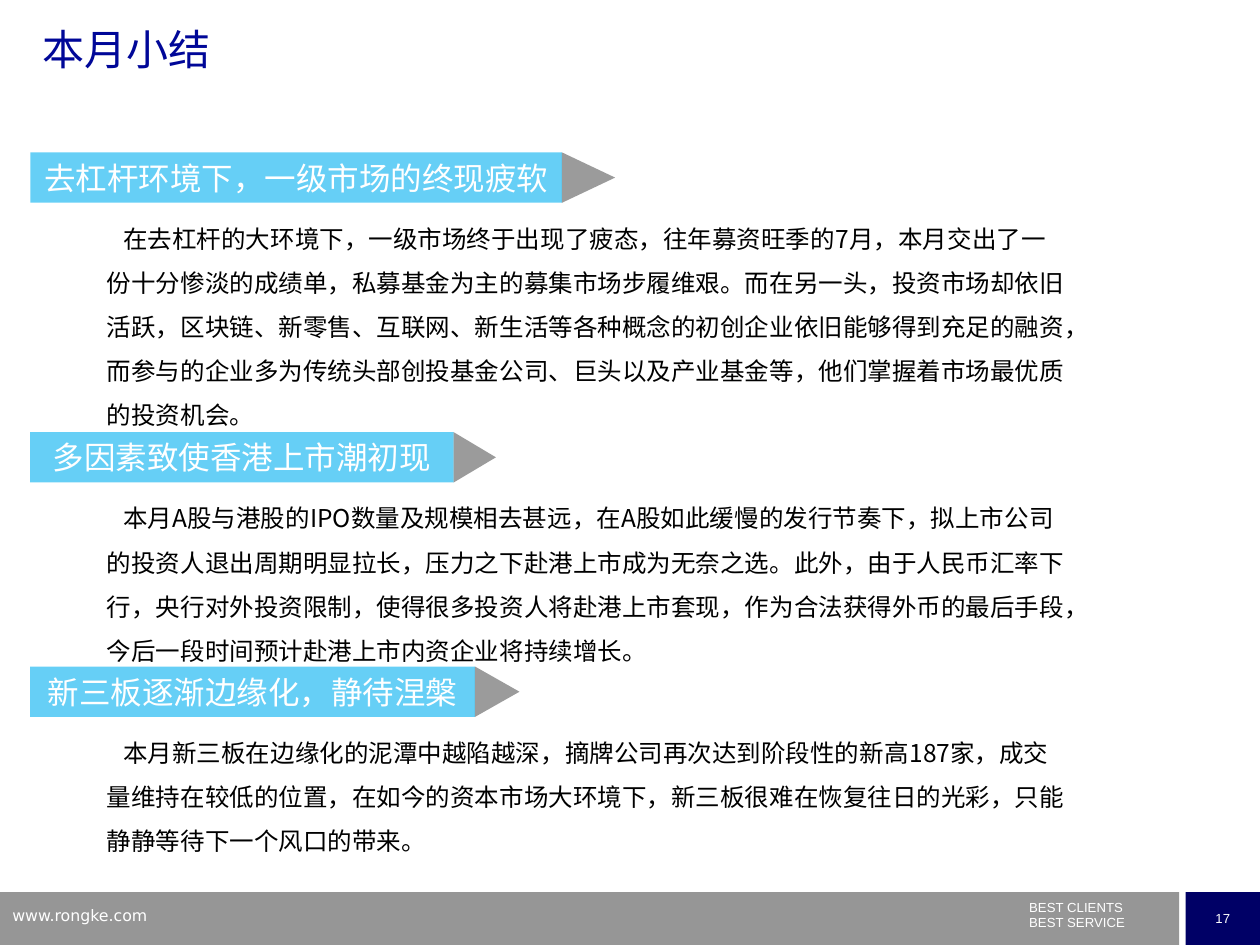
from dataclasses import dataclass

from lxml import etree
from pptx import Presentation
from pptx.dml.color import RGBColor
from pptx.enum import shapes, text
from pptx.oxml import ns
from pptx.util import Inches, Pt


@dataclass(frozen=True)
class Theme:
    """Colours, fonts and type sizes of the deck."""
    title: str = "000798"
    body: str = "000000"
    light: str = "FFFFFF"
    bar: str = "00B0F0"
    arrow: str = "595959"
    footer: str = "969696"
    page: str = "000066"
    cjk: str = "Noto Sans CJK SC"
    latin: str = "Arial"
    web: str = "DejaVu Sans"
    title_pt: float = 24
    heading_pt: float = 18
    body_pt: float = 14
    web_pt: float = 9
    small_pt: float = 7.5
    alpha: int = 60


T = Theme()

SECTIONS = [
    (1.21, 4.22, "去杠杆环境下，一级市场的终现疲软",
     "在去杠杆的大环境下，一级市场终于出现了疲态，往年募资旺季的7月，本月交出了一份十分惨淡的成绩单，"
     "私募基金为主的募集市场步履维艰。而在另一头，投资市场却依旧活跃，区块链、新零售、互联网、新生活等"
     "各种概念的初创企业依旧能够得到充足的融资，而参与的企业多为传统头部创投基金公司、巨头以及产业基金等，"
     "他们掌握着市场最优质的投资机会。"),
    (3.43, 3.36, "多因素致使香港上市潮初现",
     "本月A股与港股的IPO数量及规模相去甚远，在A股如此缓慢的发行节奏下，拟上市公司的投资人退出周期明显拉长，"
     "压力之下赴港上市成为无奈之选。此外，由于人民币汇率下行，央行对外投资限制，使得很多投资人将赴港上市套现，"
     "作为合法获得外币的最后手段，今后一段时间预计赴港上市内资企业将持续增长。"),
    (5.29, 3.53, "新三板逐渐边缘化，静待涅槃",
     "本月新三板在边缘化的泥潭中越陷越深，摘牌公司再次达到阶段性的新高187家，成交量维持在较低的位置，"
     "在如今的资本市场大环境下，新三板很难在恢复往日的光彩，只能静静等待下一个风口的带来。"),
]


def write(sp, content, font, size, color, wrap=True):
    """Set the text of a shape and format its runs."""
    tf = sp.text_frame
    tf.text = content
    tf.word_wrap = wrap
    for p in tf.paragraphs:
        for r in p.runs:
            r.font.name, r.font.size = font, Pt(size)
            r.font.color.rgb = RGBColor.from_string(color)
            ea = etree.SubElement(r.font._element, ns.qn("a:ea"))
            ea.set("typeface", font)
    return tf


def add_text(slide, box, *style, **options):
    """Add a text box and return its text frame."""
    return write(slide.shapes.add_textbox(*map(Inches, box)), *style, **options)


def add_block(slide, kind, box, color, alpha=100):
    """Add a flat borderless shape, optionally translucent."""
    sp = slide.shapes.add_shape(kind, *map(Inches, box))
    sp.shadow.inherit = False
    sp.line.fill.background()
    sp.fill.solid()
    sp.fill.fore_color.rgb = RGBColor.from_string(color)
    if alpha < 100:
        clr = sp.fill._xPr.find(".//" + ns.qn("a:srgbClr"))
        etree.SubElement(clr, ns.qn("a:alpha")).set("val", str(alpha * 1000))
    return sp


def center(tf):
    """Centre a text frame both ways."""
    tf.vertical_anchor = text.MSO_ANCHOR.MIDDLE
    tf.paragraphs[0].alignment = text.PP_ALIGN.CENTER


def add_section(slide, x, y, w, heading, body):
    """Place an arrow-tipped heading bar with its paragraph below."""
    h, tip = 0.4, 0.1 * w
    bar = add_block(slide, shapes.MSO_SHAPE.RECTANGLE, (x, y, w, h), T.bar, T.alpha)
    center(write(bar, heading, T.cjk, T.heading_pt, T.light, wrap=False))
    tri_box = (x + w + (tip - h) / 2, y + (h - tip) / 2, h, tip)
    tri = add_block(slide, shapes.MSO_SHAPE.ISOSCELES_TRIANGLE, tri_box, T.arrow, T.alpha)
    tri.rotation = 90
    tf = add_text(slide, (x + 0.51, y + h, 7.84, 1.1), body, T.cjk, T.body_pt, T.body)
    p = tf.paragraphs[0]
    p.line_spacing = 1.5
    p._p.get_or_add_pPr().set("indent", str(Inches(0.13)))


def add_footer(slide, x, y, w, h):
    """Place the footer band, slogan, web address and page number."""
    page_w, gap = 0.59, 0.05
    page_x = x + w - page_w
    rect = shapes.MSO_SHAPE.RECTANGLE
    add_block(slide, rect, (x, y, w - page_w - gap, h), T.footer)
    page = add_block(slide, rect, (page_x, y, page_w, h), T.page)
    center(write(page, "17", T.latin, T.small_pt, T.light, wrap=False))
    slogan = add_text(slide, (x + 8.07, y + 0.06, 1.5, 0.29),
                      "BEST CLIENTS\nBEST SERVICE", T.latin, T.small_pt, T.light)
    for i, p in enumerate(slogan.paragraphs):
        p.line_spacing = 0.5
        p.space_before = Pt(4.3 * i)
    add_text(slide, (x, y + 0.06, 2.4, 0.26), "www.rongke.com", T.web, T.web_pt, T.light)


def main():
    """Build and save the slide."""
    prs = Presentation()
    prs.slide_width, prs.slide_height = Inches(10), Inches(7.5)
    slide = prs.slides.add_slide(prs.slide_layouts[6])
    add_footer(slide, 0, 7.08, 10, 0.42)
    add_text(slide, (0.24, 0.14, 1.56, 0.5), "本月小结", T.cjk, T.title_pt, T.title, wrap=False)
    for y, w, heading, body in SECTIONS:
        add_section(slide, 0.24, y, w, heading, body)
    prs.save("out.pptx")


if __name__ == "__main__":
    main()
